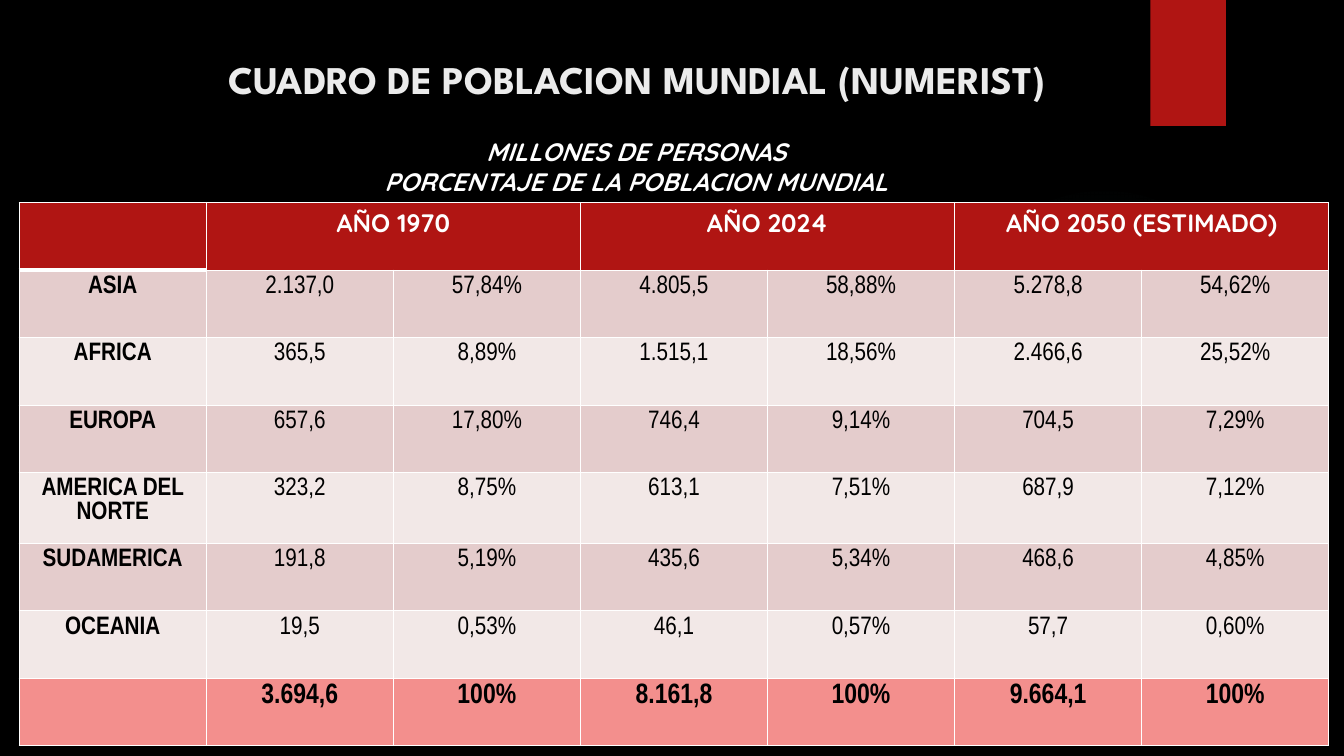
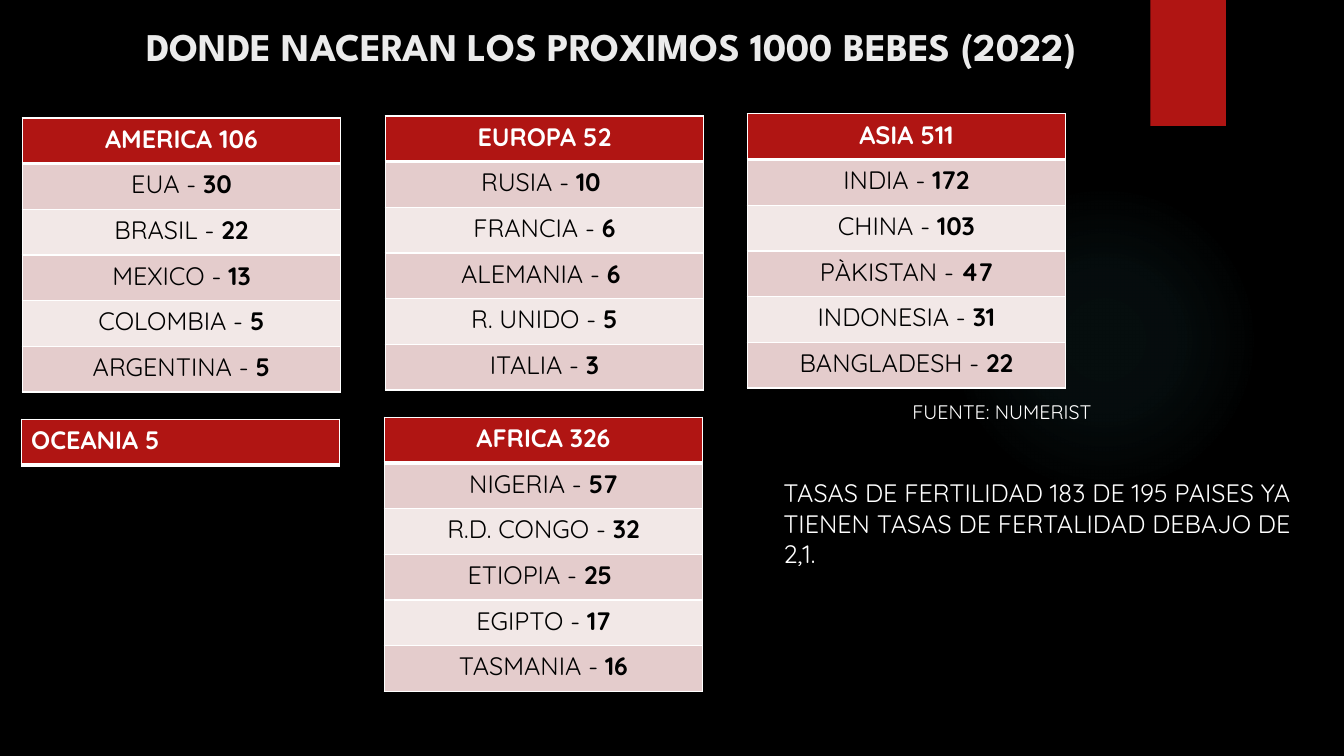
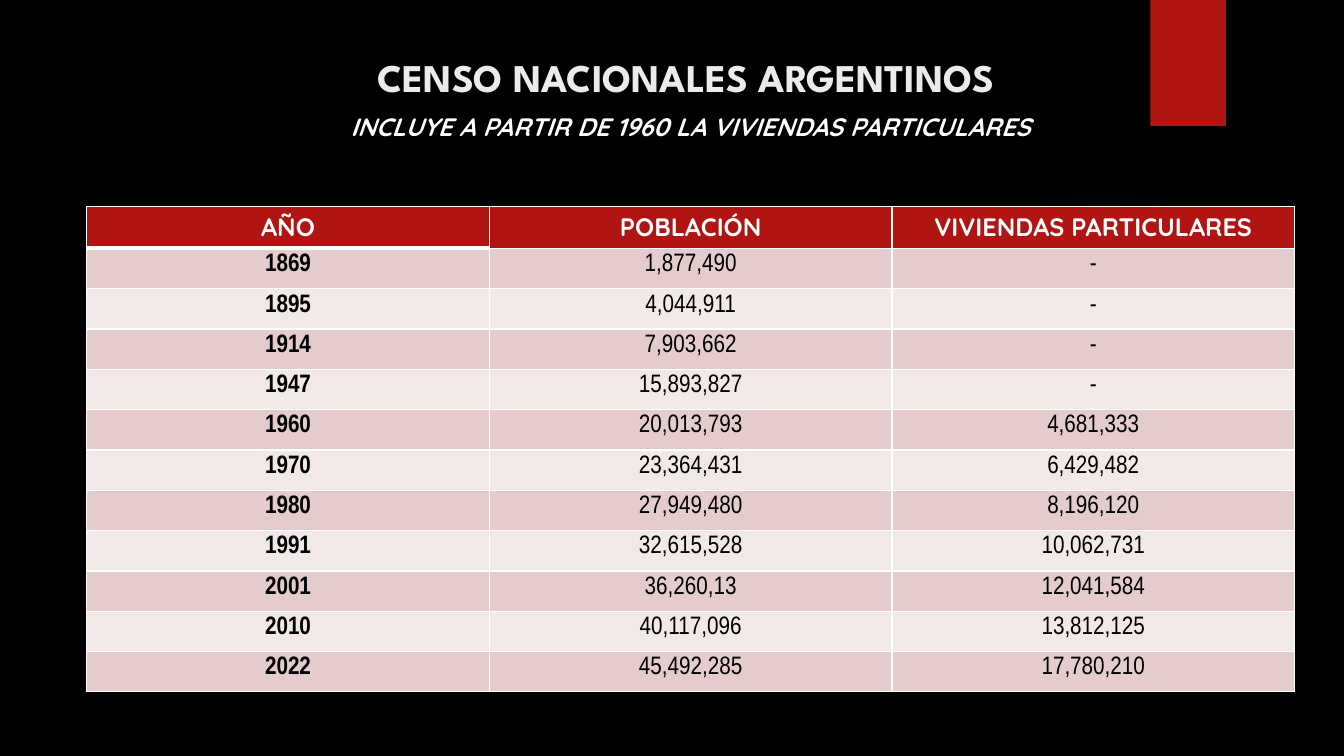
from lxml import etree
from pptx import Presentation
from pptx.dml.color import RGBColor
from pptx.enum.shapes import MSO_SHAPE
from pptx.enum.text import MSO_ANCHOR, MSO_AUTO_SIZE, PP_ALIGN
from pptx.oxml import parse_xml
from pptx.util import Inches, Pt

OVAL, RECTANGLE = MSO_SHAPE.OVAL, MSO_SHAPE.RECTANGLE
TOP, NO_FIT = MSO_ANCHOR.TOP, MSO_AUTO_SIZE.NONE
LEFT, CENTER = PP_ALIGN.LEFT, PP_ALIGN.CENTER

# Shared look
BLACK, WHITE, RED, TITLE_GREY = "000000", "FFFFFF", "B01513", "EBEBEB"
STRIPES = ("E4CCCC", "F2E8E7")
TOTAL_PINK, GLOW = "F38F8D", "50B9C1"
TITLE_FONT, TEXT_FONT, NUMBER_FONT = "League Spartan", "Quicksand", "Arial Narrow"
DRAWING_NS = "http://schemas.openxmlformats.org/drawingml/2006/main"
rgb = RGBColor.from_string


def style(paragraph, name, size, color, bold=False, italic=False, align=CENTER):
    paragraph.alignment = align
    for run in paragraph.runs:
        font = run.font
        font.name, font.size = name, Pt(size)
        font.bold, font.italic = bold, italic
        font.color.rgb = rgb(color)


def add_grid(slide, left, top, width, heights, rows, body_font,
             total=False, header_align=CENTER):
    """Red header, striped body; the first header cell has a thick lower edge."""
    columns = len(rows[0])
    table = slide.shapes.add_table(len(rows), columns, Inches(left), Inches(top),
                                   Inches(width), Inches(sum(heights))).table
    table.first_row = table.horz_banding = False
    for column in table.columns:
        column.width = Inches(width / columns)
    for r, (height, values) in enumerate(zip(heights, rows)):
        table.rows[r].height = Inches(height)
        is_total = total and r == len(rows) - 1
        for c, value in enumerate(values):
            cell = table.cell(r, c)
            fill = RED if r == 0 else TOTAL_PINK if is_total else STRIPES[(r - 1) % 2]
            cell.fill.solid()
            cell.fill.fore_color.rgb = rgb(fill)
            cell.text_frame.text = value
            paragraph = cell.text_frame.paragraphs[0]
            if r == 0:
                style(paragraph, TEXT_FONT, 18, WHITE, True, align=header_align)
            else:
                style(paragraph, body_font, 20 if is_total else 18, BLACK,
                      is_total or c == 0)
            # Cell borders
            properties = cell._tc.get_or_add_tcPr()
            for index, edge in enumerate(("lnL", "lnR", "lnT", "lnB")):
                thick = (r, c) == (0, 0) and edge == "lnB"
                thick = thick or ((r, c) == (1, 0) and edge == "lnT")
                line = etree.Element(f"{{{DRAWING_NS}}}{edge}", w=str(Pt(3 if thick else 1)))
                solid = etree.SubElement(line, f"{{{DRAWING_NS}}}solidFill")
                etree.SubElement(solid, f"{{{DRAWING_NS}}}srgbClr", val=WHITE)
                properties.insert(index, line)
    return table


prs = Presentation()
prs.slide_width, prs.slide_height = Inches(13.33), Inches(7.5)
layout = prs.slide_layouts[5]
layout.background.fill.solid()
layout.background.fill.fore_color.rgb = rgb(BLACK)

# Slides and titles
titles = [
    ("CUADRO DE POBLACION MUNDIAL (NUMERIST)", 1, 0.5),
    ("DONDE NACERAN LOS PROXIMOS 1000 BEBES (2022)", 0.75, 0.17),
    ("CENSO NACIONALES ARGENTINOS ", 1.54, 0.48),
]
for heading, left, top in titles:
    title = prs.slides.add_slide(layout).shapes.title
    title.left, title.top = Inches(left), Inches(top)
    title.width, title.height = Inches(10.63), Inches(1.16)
    title.text_frame.text = heading
    title.text_frame.word_wrap = True
    title.text_frame.auto_size = NO_FIT
    title.text_frame.vertical_anchor = TOP
    style(title.text_frame.paragraphs[0], TITLE_FONT, 28, TITLE_GREY, True)
world, births, census = prs.slides

# Glow and red band, drawn once and moved to the layout
glow = world.shapes.add_shape(OVAL, Inches(9.41), Inches(1.83), Inches(3.08), Inches(3.08))
band = world.shapes.add_shape(RECTANGLE, Inches(11.41), 0, Inches(0.75), Inches(1.25))
band.fill.solid()
band.fill.fore_color.rgb = rgb(RED)
stops = "".join(
    f'<a:gs pos="{position}000"><a:srgbClr val="{GLOW}"><a:alpha val="{alpha}000"/></a:srgbClr></a:gs>'
    for position, alpha in ((0, 7), (36, 6), (69, 0), (100, 0)))
glow.element.spPr.insert(2, parse_xml(
    f'<a:gradFill xmlns:a="{DRAWING_NS}"><a:gsLst>{stops}</a:gsLst><a:path path="circle">'
    '<a:fillToRect l="50000" t="50000" r="50000" b="50000"/></a:path></a:gradFill>'))
for index, decoration in enumerate((glow, band)):
    decoration.line.fill.background()
    decoration.shadow.inherit = False
    layout.shapes.element.insert(2 + index, decoration.element)

# World population
population = [
    ("", "AÑO 1970", "", "AÑO 2024", "", "AÑO 2050 (ESTIMADO)", ""),
    ("ASIA", "2.137,0", "57,84%", "4.805,5", "58,88%", "5.278,8", "54,62%"),
    ("AFRICA", "365,5", "8,89%", "1.515,1", "18,56%", "2.466,6", "25,52%"),
    ("EUROPA", "657,6", "17,80%", "746,4", "9,14%", "704,5", "7,29%"),
    ("AMERICA DEL NORTE", "323,2", "8,75%", "613,1", "7,51%", "687,9", "7,12%"),
    ("SUDAMERICA", "191,8", "5,19%", "435,6", "5,34%", "468,6", "4,85%"),
    ("OCEANIA", "19,5", "0,53%", "46,1", "0,57%", "57,7", "0,60%"),
    ("", "3.694,6", "100%", "8.161,8", "100%", "9.664,1", "100%"),
]
population_heights = [0.7 if row[0] == "AMERICA DEL NORTE" else 0.67 for row in population]
population_table = add_grid(world, 0.19, 2.01, 12.99, population_heights, population,
                            NUMBER_FONT, total=True)
for first in (1, 3, 5):
    population_table.cell(0, first).merge(population_table.cell(0, first + 1))

# Next 1000 births by continent
continents = [
    ("OCEANIA 5", 0.21, 4.16, []),
    ("AFRICA 326", 3.81, 4.14, [("NIGERIA", "57"), ("R.D. CONGO", "32"), ("ETIOPIA", "25 "),
                                ("EGIPTO", "17"), ("TASMANIA", "16")]),
    ("ASIA 511", 7.41, 1.13, [("INDIA", "172"), ("CHINA", "103"), ("PÀKISTAN", "47"),
                              ("INDONESIA", "31"), ("BANGLADESH", "22")]),
    ("EUROPA 52", 3.82, 1.15, [("RUSIA", "10 "), ("FRANCIA", "6"), ("ALEMANIA", "6 "),
                               ("R. UNIDO", "5"), ("ITALIA", "3")]),
    ("AMERICA 106", 0.22, 1.17, [("EUA", "30"), ("BRASIL", "22"), ("MEXICO", "13"),
                                 ("COLOMBIA", "5"), ("ARGENTINA", "5")]),
]
for continent, left, top, countries in continents:
    rows = [(continent,)] + [(f"{country} - ",) for country, _ in countries]
    births_table = add_grid(births, left, top, 3.16, [2.72 / 6] * len(rows), rows, TEXT_FONT,
                            header_align=CENTER if countries else LEFT)
    for r, (_, babies) in enumerate(countries, 1):
        paragraph = births_table.cell(r, 0).text_frame.paragraphs[0]
        paragraph.add_run().text = babies
        style(paragraph, TEXT_FONT, 18, BLACK)
        paragraph.runs[-1].font.bold = True

# Argentine censuses
censuses = [
    ("AÑO", "POBLACIÓN", "VIVIENDAS PARTICULARES"),
    ("1869", "1,877,490", "-"),
    ("1895", "4,044,911", "-"),
    ("1914", "7,903,662", "-"),
    ("1947", "15,893,827", "-"),
    ("1960", "20,013,793", "4,681,333"),
    ("1970", "23,364,431", "6,429,482"),
    ("1980", "27,949,480", "8,196,120"),
    ("1991", "32,615,528", "10,062,731"),
    ("2001", "36,260,13", "12,041,584"),
    ("2010", "40,117,096", "13,812,125"),
    ("2022", "45,492,285", "17,780,210"),
]
add_grid(census, 0.86, 2.05, 11.98, [0.4] * len(censuses), censuses, NUMBER_FONT)

# Subtitles and notes on the slides
captions = [
    (world, (2.07, 1.3, 8.48, 0.71),
     "MILLONES DE PERSONAS\nPORCENTAJE DE LA POBLACION MUNDIAL", 18, True),
    (births, (8.95, 3.92, 2.42, 0.34), "FUENTE: NUMERIST", 14, False),
    (births, (7.67, 4.69, 5.55, 1.01),
     "TASAS DE FERTILIDAD 183 DE 195 PAISES YA TIENEN TASAS DE FERTALIDAD DEBAJO DE 2,1.",
     18, False),
    (census, (2.61, 1.06, 8.48, 0.4),
     "INCLUYE A PARTIR DE 1960 LA VIVIENDAS PARTICULARES", 18, True),
]
for slide, box, wording, size, is_subtitle in captions:
    caption = slide.shapes.add_textbox(*[Inches(length) for length in box]).text_frame
    caption.word_wrap = True
    caption.text = wording
    for paragraph in caption.paragraphs:
        style(paragraph, TEXT_FONT, size, WHITE, is_subtitle, is_subtitle,
              CENTER if is_subtitle else LEFT)

prs.save("out.pptx")
